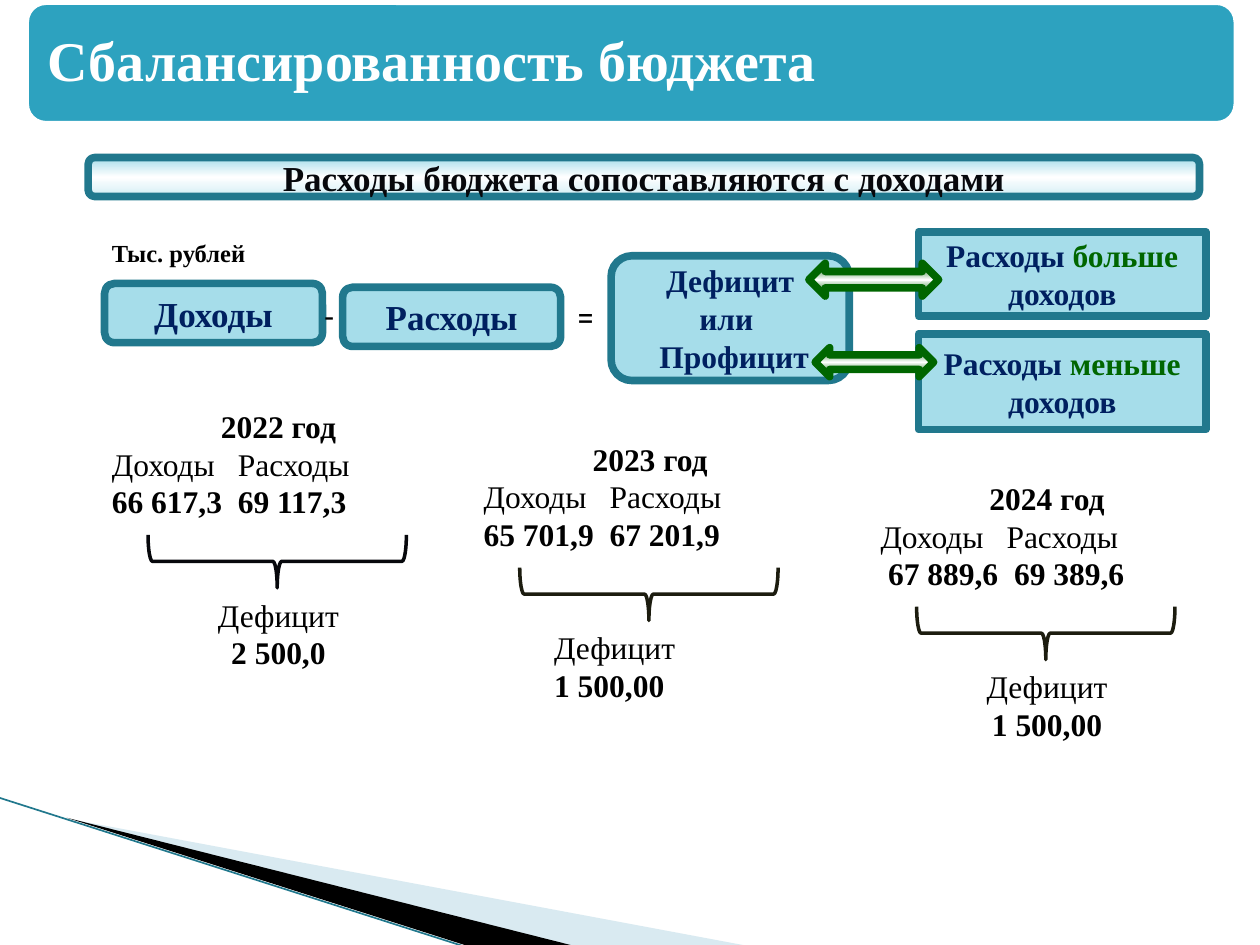
from copy import deepcopy

from pptx import Presentation
from pptx.dml.color import RGBColor
from pptx.enum.shapes import MSO_CONNECTOR, MSO_SHAPE
from pptx.enum.text import MSO_ANCHOR, PP_ALIGN
from pptx.oxml.ns import qn
from pptx.util import Inches, Pt
from lxml.etree import SubElement

FONT = "Times New Roman"
COLORS = {
    "title": "2DA2BF", "white": "FFFFFF", "black": "000000", "ink": "07080C",
    "navy": "002060", "green": "006600", "box": "A6DDEA", "pale": "D3EEF5",
    "border": "21788D", "wedge": "A0CBDC", "brace": "1C1C0F",
}


def rgb(name):
    return RGBColor.from_string(COLORS[name])


def add_run(p, text, size, color="black", bold=True, font=FONT):
    r = p.add_run()
    r.text = text
    r.font.name, r.font.size, r.font.bold = font, Pt(size), bold
    r.font.color.rgb = rgb(color)


def set_gradient(sp, names):
    """Vertical three-stop gradient."""
    fill = sp.fill
    fill.gradient()
    fill.gradient_angle = 270
    stops = sp._element.spPr.find(qn("a:gradFill")).find(qn("a:gsLst"))
    stops.append(deepcopy(stops[-1]))
    for stop, name, position in zip(fill.gradient_stops, names, (0, 0.5, 1)):
        stop.color.rgb = rgb(name)
        stop.position = position


def add_box(s, kind, at, fill, line, width=4.33):
    sp = s.shapes.add_shape(kind, *map(Inches, at))
    sp.shadow.inherit = False
    if fill is None:
        sp.fill.background()
    elif isinstance(fill, tuple):
        set_gradient(sp, fill)
    else:
        sp.fill.solid()
        sp.fill.fore_color.rgb = rgb(fill)
    sp.line.color.rgb = rgb(line)
    sp.line.width = Pt(width)
    return sp


def add_label_box(s, kind, at, lines, size, fill="box"):
    """Bordered box; each line is a list of (text, colour) runs."""
    tf = add_box(s, kind, at, fill, "border").text_frame
    tf.word_wrap = True
    tf.vertical_anchor = MSO_ANCHOR.MIDDLE
    for i, runs in enumerate(lines):
        p = tf.add_paragraph() if i else tf.paragraphs[0]
        p.alignment = PP_ALIGN.CENTER
        for text, color in runs:
            add_run(p, text, size, color)


def add_text(s, at, text, size, bold=True, font=FONT):
    tf = s.shapes.add_textbox(*map(Inches, at)).text_frame
    tf.word_wrap = True
    add_run(tf.paragraphs[0], text, size, bold=bold, font=font)


def set_columns(p, tab, indent=0.0):
    pPr = p._p.get_or_add_pPr()
    pPr.set("marL", str(Inches(indent)))
    pPr.set("indent", "0")
    tabs = SubElement(pPr, qn("a:tabLst"))
    SubElement(tabs, qn("a:tab"), pos=str(Inches(tab)), algn="l")


def add_year(s, left, top, year, values, deficit, tab, indent=0.0,
             deficit_indent=None, brace="brace"):
    """Income and expenses of a year, with a brace down to the deficit."""
    tf = s.shapes.add_textbox(Inches(left), Inches(top), Inches(2.84), Inches(2.22)).text_frame
    tf.word_wrap = True
    p = tf.paragraphs[0]
    p.alignment = PP_ALIGN.CENTER
    add_run(p, f"{year} год", 18)
    rows = ((("Доходы", "Расходы"), 1.38, 0, False), (values, tab, indent, True))
    for cells, stop, margin, bold in rows:
        p = tf.add_paragraph()
        set_columns(p, stop, margin)
        add_run(p, "\t".join(cells), 18, bold=bold)
    for text, bold, gap in (("Дефицит", False, 43), (deficit, True, 0)):
        p = tf.add_paragraph()
        p.space_before = Pt(gap)
        if deficit_indent is None:
            p.alignment = PP_ALIGN.CENTER
        else:
            pPr = p._p.get_or_add_pPr()
            pPr.set("marL", str(Inches(deficit_indent)))
            pPr.set("indent", "0")
        add_run(p, text, 18, bold=bold)
    sp = add_box(s, MSO_SHAPE.LEFT_BRACE, (left + 1.2, top + 0.25, 0.42, 2.05), None, brace, 2)
    sp.rotation = 270


def add_wedge(s, points, color, opacity=100):
    (x, y), *rest = points
    builder = s.shapes.build_freeform(Inches(x), Inches(y))
    builder.add_line_segments([(Inches(a), Inches(b)) for a, b in rest])
    sp = builder.convert_to_shape()
    sp.shadow.inherit = False
    sp.fill.solid()
    sp.fill.fore_color.rgb = rgb(color)
    sp.line.fill.background()
    if opacity < 100:
        clr = sp._element.spPr.find(qn("a:solidFill"))[0]
        SubElement(clr, qn("a:alpha"), val=str(opacity * 1000))


def add_corner(s):
    add_wedge(s, [(0.55, 6.5), (5.95, 7.51), (4.56, 7.51)], "wedge", 40)
    add_wedge(s, [(0.53, 6.49), (4.57, 7.51), (3.72, 7.51)], "black")
    line = s.shapes.add_connector(MSO_CONNECTOR.STRAIGHT, Inches(-0.01), Inches(6.33),
                                  Inches(3.71), Inches(7.52))
    line.line.color.rgb = rgb("border")
    line.line.width = Pt(0.95)
    SubElement(line._element.spPr, qn("a:effectLst"))


def add_title(s, text):
    sp = add_box(s, MSO_SHAPE.ROUNDED_RECTANGLE, (0.2, 0.01, 9.62, 0.98), "title", "white")
    tf = sp.text_frame
    tf.word_wrap = True
    tf.vertical_anchor = MSO_ANCHOR.MIDDLE
    tf.margin_left = tf.margin_right = Inches(0.13)
    p = tf.paragraphs[0]
    p.alignment = PP_ALIGN.LEFT
    p.line_spacing = 0.9
    add_run(p, text, 32, "white")


def add_formula(s):
    rounded = MSO_SHAPE.ROUNDED_RECTANGLE
    add_label_box(s, rounded, (0.83, 2.25, 1.73, 0.47), [[("Доходы", "navy")]], 20)
    add_label_box(s, rounded, (4.85, 2.03, 1.89, 0.99),
                  [[(t, "navy")] for t in ("Дефицит", "или ", " Профицит")], 18)
    add_label_box(s, rounded, (2.72, 2.28, 1.73, 0.47), [[("Расходы", "navy")]], 20)
    add_text(s, (4.48, 2.32, 0.39, 0.4), "=", 18, False, "Roboto")
    add_text(s, (2.48, 2.31, 0.39, 0.4), "-", 18, False, "Roboto")
    for top, height, word in ((1.84, 0.67, "больше"), (2.65, 0.76, "меньше")):
        runs = [("Расходы ", "navy"), (word, "green"), (" доходов", "navy")]
        add_label_box(s, MSO_SHAPE.RECTANGLE, (7.29, top, 2.28, height), [runs], 18)


def main():
    prs = Presentation()
    prs.slide_width, prs.slide_height = Inches(10), Inches(7.5)
    s = prs.slides.add_slide(prs.slide_layouts[6])
    add_corner(s)
    add_title(s, "Сбалансированность бюджета")
    add_label_box(s, MSO_SHAPE.ROUNDED_RECTANGLE, (0.7, 1.25, 8.82, 0.31),
                  [[("Расходы бюджета сопоставляются с доходами", "ink")]], 20,
                  ("box", "white", "pale"))
    add_formula(s)
    add_year(s, 0.79, 3.18, 2022, ("66 617,3", "69 117,3"), "2 500,0", 1.44, brace="ink")
    add_year(s, 3.74, 3.44, 2023, ("65 701,9", "67 201,9"), "1 500,00", 1.56,
             deficit_indent=0.56)
    add_year(s, 6.89, 3.75, 2024, ("67 889,6", "69 389,6"), "1 500,00", 1.37, indent=0.06)
    add_text(s, (0.79, 1.84, 1.29, 0.34), "Тыс. рублей", 14)
    for at in ((6.42, 2.09, 1.03, 0.26), (6.47, 2.76, 0.94, 0.23)):
        add_box(s, MSO_SHAPE.LEFT_RIGHT_ARROW, at, ("green", "white", "green"), "green")
    prs.save("out.pptx")


if __name__ == "__main__":
    main()
